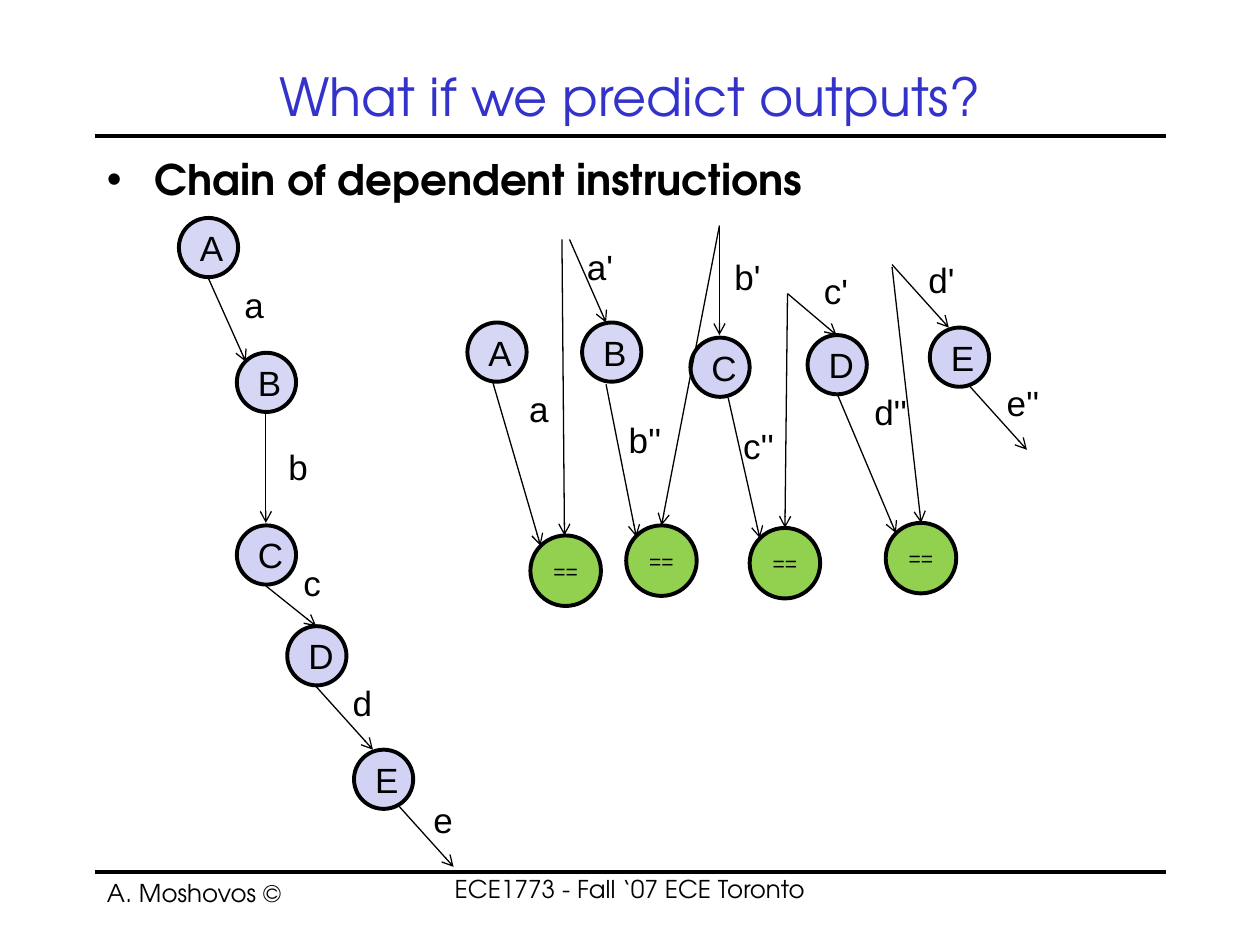
from dataclasses import dataclass

from pptx import Presentation
from pptx.dml.color import RGBColor
from pptx.enum.shapes import MSO_CONNECTOR, MSO_SHAPE
from pptx.enum.text import MSO_ANCHOR, MSO_AUTO_SIZE, PP_ALIGN
from pptx.oxml.ns import qn
from pptx.util import Inches, Pt
from lxml.etree import SubElement


@dataclass(frozen=True)
class Theme:
    heading_font: str = "TeX Gyre Adventor"
    label_font: str = "Arial"
    ink: str = "000000"
    title: str = "3333CC"
    early: str = "D6D6F5"
    late: str = "D2D2F4"
    check: str = "92D050"
    title_size: int = 30
    body_size: int = 24
    label_size: int = 20
    footer_size: int = 14
    check_size: int = 12
    thick: float = 2.25
    thin: float = 0.75


THEME = Theme()
COLS, ROWS = 100, 75
NODE, CHECK = 4.7, 5.6


def write(tf, text, font=THEME.heading_font, size=THEME.label_size,
          color=THEME.ink, bold=False, align=PP_ALIGN.LEFT,
          anchor=MSO_ANCHOR.TOP, wrap=True):
    tf.word_wrap = wrap
    tf.auto_size = MSO_AUTO_SIZE.NONE if wrap else MSO_AUTO_SIZE.SHAPE_TO_FIT_TEXT
    tf.vertical_anchor = anchor
    p = tf.paragraphs[0]
    p.alignment = align
    r = p.add_run()
    r.text = text
    r.font.name, r.font.size, r.font.bold = font, Pt(size), bold
    r.font.color.rgb = RGBColor.from_string(color)
    return p


class Canvas:
    def __init__(self, prs, theme):
        self.theme = theme
        self.col = prs.slide_width / COLS
        self.row = prs.slide_height / ROWS
        self.s = prs.slides.add_slide(prs.slide_layouts[6])

    def span(self, x, y, w, h):
        return (round(x * self.col), round(y * self.row),
                round(w * self.col), round(h * self.row))

    def text(self, text, x, y, w, h, **style):
        sp = self.s.shapes.add_textbox(*self.span(x, y, w, h))
        return write(sp.text_frame, text, **style)

    def bullet(self, text, x, y, w, h, **style):
        p = self.text(text, x, y, w, h, **style)
        p.space_before = Pt(0.2 * style["size"])
        pPr = p._p.get_or_add_pPr()
        pPr.set("marL", str(Inches(0.38)))
        pPr.set("indent", str(Inches(-0.38)))
        SubElement(pPr, qn("a:buFont")).set("typeface", self.theme.label_font)
        SubElement(pPr, qn("a:buChar")).set("char", "•")

    def label(self, text, x, y):
        self.text(text, x, y, 3.1 + 0.55 * len(text), 4.4,
                  font=self.theme.label_font, wrap=False)

    def circle(self, text, x, y, d, fill, size):
        sp = self.s.shapes.add_shape(MSO_SHAPE.OVAL, *self.span(x, y, d, d))
        sp.shadow.inherit = False
        sp.fill.solid()
        sp.fill.fore_color.rgb = RGBColor.from_string(fill)
        sp.line.color.rgb = RGBColor.from_string(self.theme.ink)
        sp.line.width = Pt(self.theme.thick)
        write(sp.text_frame, text, font=self.theme.label_font, size=size,
              align=PP_ALIGN.CENTER, anchor=MSO_ANCHOR.MIDDLE)

    def node(self, name, x, y):
        fill = self.theme.early if name in "AB" else self.theme.late
        self.circle(name, x, y, NODE, fill, self.theme.label_size)

    def check(self, x, y):
        self.circle("==", x, y, CHECK, self.theme.check, self.theme.check_size)

    def line(self, x1, y1, x2, y2, width):
        sp = self.s.shapes.add_connector(
            MSO_CONNECTOR.STRAIGHT, *self.span(x1, y1, x2, y2))
        sp.line.color.rgb = RGBColor.from_string(self.theme.ink)
        sp.line.width = Pt(width)
        SubElement(sp._element.spPr, qn("a:effectLst"))
        return sp

    def rule(self, y):
        self.line(7.5, y, 92.5, y, self.theme.thick)

    def arrow(self, x1, y1, x2, y2):
        sp = self.line(x1, y1, x2, y2, self.theme.thin)
        SubElement(sp.line._get_or_add_ln(), qn("a:tailEnd")).set("type", "arrow")


CHAIN_NODES = [("A", 14.2, 17.3), ("B", 18.8, 28.0), ("C", 18.8, 41.7),
               ("D", 22.8, 49.7), ("E", 28.1, 59.5)]
CHAIN_ARROWS = [(16.5, 22, 19.5, 28.7), (21.1, 32.8, 21.1, 41.5),
                (21.1, 46.5, 25.1, 49.7), (25.1, 54.5, 29.6, 59.5),
                (31.5, 63.8, 36, 68.8)]
CHAIN_LABELS = [("a", 18.4, 22), ("b", 21.9, 34.9), ("c", 23.1, 44.1),
                ("d", 27, 53.6), ("e", 33.4, 62.9)]

PREDICTED_NODES = [("A", 37.1, 25.6), ("B", 46.2, 25.6), ("C", 54.8, 26.8),
                   ("D", 64.1, 26.6), ("E", 73.8, 26.0)]
INPUT_ARROWS = [(45.2, 19, 48.1, 25.6), (57.1, 17.9, 57.1, 26.6),
                (62.5, 23.3, 66.4, 26.6), (70.8, 21, 75.3, 26)]
OUTPUT_ARROWS = [(39.1, 30.3, 42.9, 43.3), (48.1, 30.5, 50.5, 42.6),
                 (57.8, 31.6, 60.3, 42.7), (66.5, 31.4, 71.1, 42.3),
                 (77, 30.7, 81.5, 35.7)]
CHECK_ARROWS = [(44.6, 19, 44.8, 42.5), (57.1, 17.9, 52.5, 41.7),
                (62.5, 23.3, 62.3, 41.9), (70.8, 21.2, 73.1, 41.5)]
PREDICTED_LABELS = [("a'", 45.6, 19), ("b'", 57.3, 19.8), ("c'", 64.4, 20.9),
                    ("d'", 72.7, 20), ("a", 41, 30.3), ("b''", 48.9, 32.7),
                    ("c''", 58, 33.2), ("d''", 68.4, 30.5), ("e''", 78.9, 29.8)]
CHECKS = [(42.1, 42.5), (49.7, 41.7), (59.5, 41.9), (70.3, 41.5)]


def main():
    prs = Presentation()
    prs.slide_width, prs.slide_height = Inches(10), Inches(7.5)
    c = Canvas(prs, THEME)

    for y in (10.8, 69.2):
        c.rule(y)
    c.text("What if we predict outputs?", 7.5, 4.2, 85, 6.7,
           size=THEME.title_size, color=THEME.title,
           align=PP_ALIGN.CENTER, anchor=MSO_ANCHOR.MIDDLE)
    c.bullet("Chain of dependent instructions", 7.5, 11.7, 85, 56.7,
             size=THEME.body_size, bold=True)
    c.text("A. Moshovos ©", 7.5, 69.2, 20.8, 4.2, size=THEME.footer_size)
    c.text("ECE1773 - Fall ‘07 ECE Toronto", 32.5, 68.9, 35, 4.2,
           size=THEME.footer_size, align=PP_ALIGN.CENTER)

    for node in CHAIN_NODES + PREDICTED_NODES:
        c.node(*node)
    for check in CHECKS:
        c.check(*check)
    for arrow in CHAIN_ARROWS + INPUT_ARROWS + OUTPUT_ARROWS + CHECK_ARROWS:
        c.arrow(*arrow)
    for label in CHAIN_LABELS + PREDICTED_LABELS:
        c.label(*label)

    prs.save("out.pptx")


if __name__ == "__main__":
    main()
